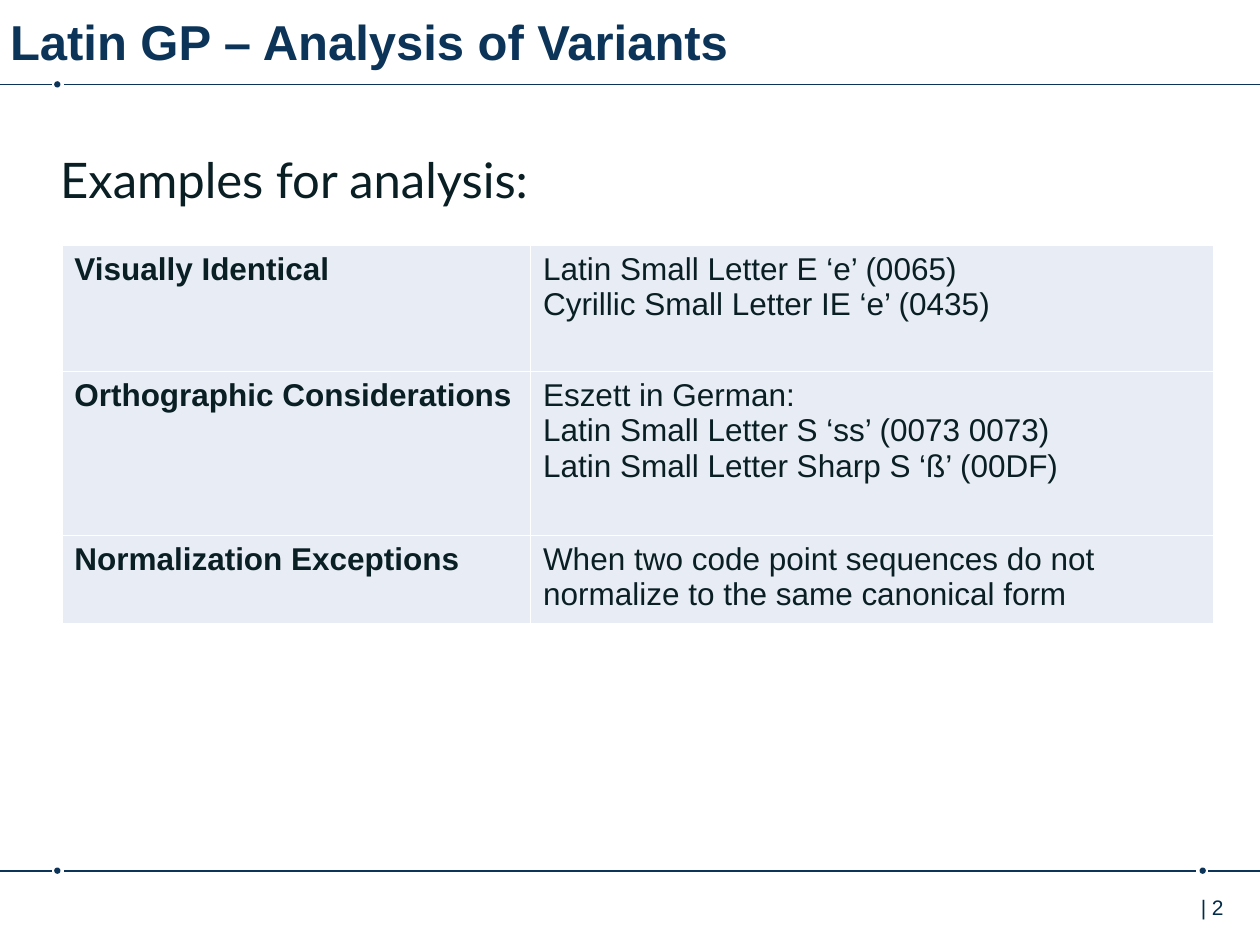
from lxml import etree
from pptx import Presentation
from pptx.dml.color import RGBColor
from pptx.enum import shapes, text
from pptx.oxml.ns import qn
from pptx.util import Inches, Pt

NAVY = RGBColor(0x0C, 0x34, 0x58)
INK = RGBColor(0x0A, 0x1F, 0x24)
NUMBER = RGBColor(0x00, 0x2B, 0x49)
PALE = RGBColor(0xE8, 0xED, 0xF5)
WHITE = RGBColor(0xFF, 0xFF, 0xFF)

TITLE = "Latin GP – Analysis of Variants"
INTRO = "Examples for analysis:"
PAGE = "| 2"
ROWS = [
    ("Visually Identical", 1.0,
     ["Latin Small Letter E ‘e’ (0065)", "Cyrillic Small Letter IE ‘е’ (0435)"]),
    ("Orthographic Considerations", 1.3,
     ["Eszett in German:", "Latin Small Letter S ‘ss’ (0073 0073)",
      "Latin Small Letter Sharp S ‘ß’ (00DF)"]),
    ("Normalization Exceptions", 0.7,
     ["When two code point sequences do not normalize to the same canonical form"]),
]
COLS = [3.72, 5.42]
DOT = 0.05
RULES = [
    (0.67, [0.43], [(0, 0.41), (0.51, 10)]),
    (6.91, [0.43, 9.52], [(0, 0.41), (0.51, 9.49), (9.59, 10)]),
]


def write(tf, lines, size=18, font="Arial", color=INK, bold=False):
    tf.word_wrap = True
    for i, line in enumerate(lines):
        p = tf.paragraphs[0] if i == 0 else tf.add_paragraph()
        p.alignment = text.PP_ALIGN.LEFT
        r = p.add_run()
        r.text = line
        r.font.size = Pt(size)
        r.font.name = font
        r.font.bold = bold
        r.font.color.rgb = color


def add_rule(s, y, dots, spans):
    for x in dots:
        sp = s.shapes.add_shape(shapes.MSO_SHAPE.OVAL, Inches(x), Inches(y - DOT / 2),
                                Inches(DOT), Inches(DOT))
        sp.shadow.inherit = False
        sp.fill.solid()
        sp.fill.fore_color.rgb = NAVY
        sp.line.fill.background()
    for x1, x2 in spans:
        ln = s.shapes.add_connector(shapes.MSO_CONNECTOR.STRAIGHT, Inches(x1), Inches(y),
                                    Inches(x2), Inches(y))
        ln.line.color.rgb = NAVY
        ln.line.width = Pt(1)
        etree.SubElement(ln._element.spPr, qn("a:effectLst"))


def style_cell(cell):
    tcPr = cell._tc.get_or_add_tcPr()
    for side in ("lnL", "lnR", "lnT", "lnB"):
        ln = etree.SubElement(tcPr, qn(f"a:{side}"), w=str(Pt(1)))
        fill = etree.SubElement(ln, qn("a:solidFill"))
        etree.SubElement(fill, qn("a:srgbClr"), val=str(WHITE))
    cell.fill.solid()
    cell.fill.fore_color.rgb = PALE


def add_text(s, x, y, w, h, line, **fmt):
    tf = s.shapes.add_textbox(Inches(x), Inches(y), Inches(w), Inches(h)).text_frame
    write(tf, [line], **fmt)
    return tf


def add_table(s):
    tbl = s.shapes.add_table(len(ROWS), len(COLS), Inches(0.49), Inches(1.95),
                             Inches(sum(COLS)), Inches(sum(r[1] for r in ROWS))).table
    tbl.first_row = tbl.horz_banding = False
    for col, w in zip(tbl.columns, COLS):
        col.width = Inches(w)
    for i, (label, h, examples) in enumerate(ROWS):
        tbl.rows[i].height = Inches(h)
        for j, lines in enumerate(([label], examples)):
            cell = tbl.cell(i, j)
            style_cell(cell)
            write(cell.text_frame, lines, bold=j == 0)


def main():
    prs = Presentation()
    prs.slide_width, prs.slide_height = Inches(10), Inches(7.5)
    s = prs.slides.add_slide(prs.slide_layouts[5])

    for rule in RULES:
        add_rule(s, *rule)
    add_text(s, 9.29, 7.05, 0.87, 0.4, PAGE, size=12, color=NUMBER).margin_left = Inches(0.24)

    title = s.shapes.title
    title.left, title.top = Inches(0), Inches(-0.01)
    title.width, title.height = Inches(10), Inches(0.78)
    tf = title.text_frame
    tf.auto_size = text.MSO_AUTO_SIZE.NONE
    tf.vertical_anchor = text.MSO_ANCHOR.TOP
    tf.margin_left, tf.margin_top = Inches(0.08), Inches(0.1)
    write(tf, [TITLE], size=28, color=NAVY, bold=True)

    add_text(s, 0.38, 1.14, 9.24, 2.93, INTRO, size=28, font="Lato")
    add_table(s)
    prs.save("out.pptx")


if __name__ == "__main__":
    main()
